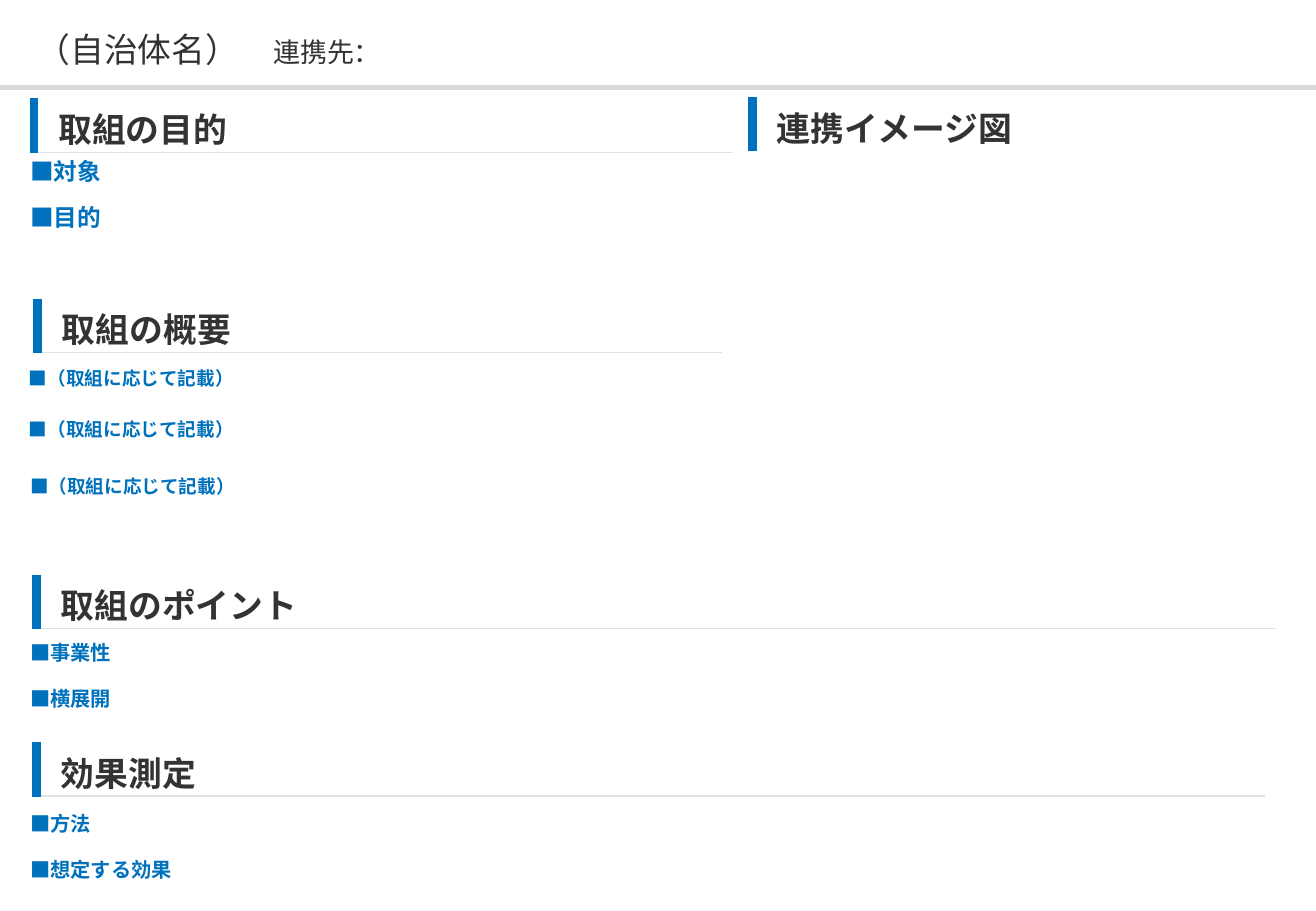
from typing import NamedTuple

from lxml import etree
from pptx import Presentation
from pptx.dml.color import RGBColor
from pptx.enum import shapes, text
from pptx.oxml import ns
from pptx.util import Inches, Pt

FONT = "Noto Sans CJK JP"
BLUE = RGBColor(0x00, 0x71, 0xBC)
DARK = RGBColor(0x33, 0x33, 0x33)
GREY = RGBColor(0xD9, 0xD9, 0xD9)
PALE = RGBColor(0xE1, 0xE1, 0xE3)


class Head(NamedTuple):
    words: str
    left: float
    top: float
    width: float
    high: float
    rule: bool = True


class Label(NamedTuple):
    words: str
    left: float
    top: float
    width: float
    high: float
    size: int
    line: float | None = 1.1
    after: int | None = 12


HEADS = [
    Head("取組の目的", 0.28, 0.81, 5.75, 0.37),
    Head("取組のポイント", 0.3, 4.73, 10.19, 0.4),
    Head("効果測定", 0.3, 6.11, 10.11, 0.38),
    Head("連携イメージ図", 6.19, 0.8, 2.72, 0.37, rule=False),
    Head("取組の概要", 0.31, 2.46, 5.63, 0.37),
]

NOTE = "■（取組に応じて記載）"
LABELS = [
    Label("■対象", 0.15, 1.24, 5.48, 0.34, 14, None, None),
    Label("■目的", 0.15, 1.62, 5.48, 0.34, 14, None, None),
    Label(NOTE, 0.14, 2.95, 5.48, 0.3, 11),
    Label(NOTE, 0.14, 3.37, 5.48, 0.3, 11),
    Label(NOTE, 0.15, 3.84, 5.48, 0.3, 11),
    Label("■事業性", 0.15, 5.2, 9.82, 0.32, 12),
    Label("■横展開", 0.15, 5.58, 9.82, 0.32, 12),
    Label("■方法", 0.15, 6.61, 9.82, 0.32, 12),
    Label("■想定する効果", 0.15, 6.99, 9.82, 0.32, 12),
]


def write(para, words: str, *, size: int, color: RGBColor, bold: bool = False,
          align=text.PP_ALIGN.LEFT, line: float | None = 1.1,
          after: int | None = None) -> None:
    """Add a run to a paragraph and set the paragraph's layout."""
    para.alignment = align
    if line is not None:
        para.line_spacing = line
    if after is not None:
        para.space_after = Pt(after)
    run = para.add_run()
    run.text = words
    font = run.font
    font.size, font.bold, font.name = Pt(size), bold, FONT
    font.color.rgb = color
    east = etree.SubElement(run._r.get_or_add_rPr(), ns.qn("a:ea"))
    east.set("typeface", FONT)


def edge(cell, side: str, color: RGBColor | None = None, width: float = 1) -> None:
    """Set one cell border; without a colour the border is hidden."""
    line = etree.SubElement(cell._tc.get_or_add_tcPr(), ns.qn(f"a:ln{side}"))
    line.set("w", str(Pt(width)))
    if color is None:
        etree.SubElement(line, ns.qn("a:noFill"))
        return
    fill = etree.SubElement(line, ns.qn("a:solidFill"))
    etree.SubElement(fill, ns.qn("a:srgbClr")).set("val", str(color))


def add_title(slide) -> None:
    title = slide.shapes.title
    title.left, title.top = Inches(0.3), Inches(0.17)
    title.width, title.height = Inches(10.24), Inches(0.43)
    frame = title.text_frame
    frame.auto_size = text.MSO_AUTO_SIZE.NONE
    frame.vertical_anchor = text.MSO_ANCHOR.MIDDLE
    frame.margin_left = frame.margin_right = 0
    frame.margin_top = frame.margin_bottom = 0
    para = frame.paragraphs[0]
    write(para, "（自治体名）\u3000".replace("\u3000", "　"), size=20, color=DARK)
    write(para, "連携先：", size=16, color=DARK)


def add_band(slide) -> None:
    band = slide.shapes.add_shape(shapes.MSO_SHAPE.RECTANGLE, 0, Inches(0.7),
                                  Inches(10.83), Inches(0.04))
    band.shadow.inherit = False
    band.fill.solid()
    band.fill.fore_color.rgb = GREY
    band.line.fill.background()


def add_head(slide, head: Head) -> None:
    table = slide.shapes.add_table(1, 1, Inches(head.left), Inches(head.top),
                                   Inches(head.width), Inches(head.high)).table
    table.first_row = table.horz_banding = False
    cell = table.cell(0, 0)
    cell.margin_left = Inches(0.2)
    cell.margin_right = cell.margin_top = cell.margin_bottom = 0
    cell.vertical_anchor = text.MSO_ANCHOR.MIDDLE
    edge(cell, "L", BLUE, 6)
    edge(cell, "R")
    edge(cell, "T")
    edge(cell, "B", PALE if head.rule else None)
    cell.fill.background()
    write(cell.text_frame.paragraphs[0], head.words, size=20, color=DARK,
          bold=True, align=text.PP_ALIGN.JUSTIFY)


def add_label(slide, label: Label) -> None:
    box = slide.shapes.add_textbox(Inches(label.left), Inches(label.top),
                                   Inches(label.width), Inches(label.high))
    frame = box.text_frame
    frame.word_wrap = True
    frame.auto_size = text.MSO_AUTO_SIZE.SHAPE_TO_FIT_TEXT
    write(frame.paragraphs[0], label.words, size=label.size, color=BLUE,
          bold=True, line=label.line, after=label.after)


def main() -> None:
    deck = Presentation()
    deck.slide_width, deck.slide_height = Inches(10.83), Inches(7.5)
    slide = deck.slides.add_slide(deck.slide_layouts[5])
    add_band(slide)
    add_title(slide)
    for head in HEADS:
        add_head(slide, head)
    for label in LABELS:
        add_label(slide, label)
    deck.save("out.pptx")


if __name__ == "__main__":
    main()
